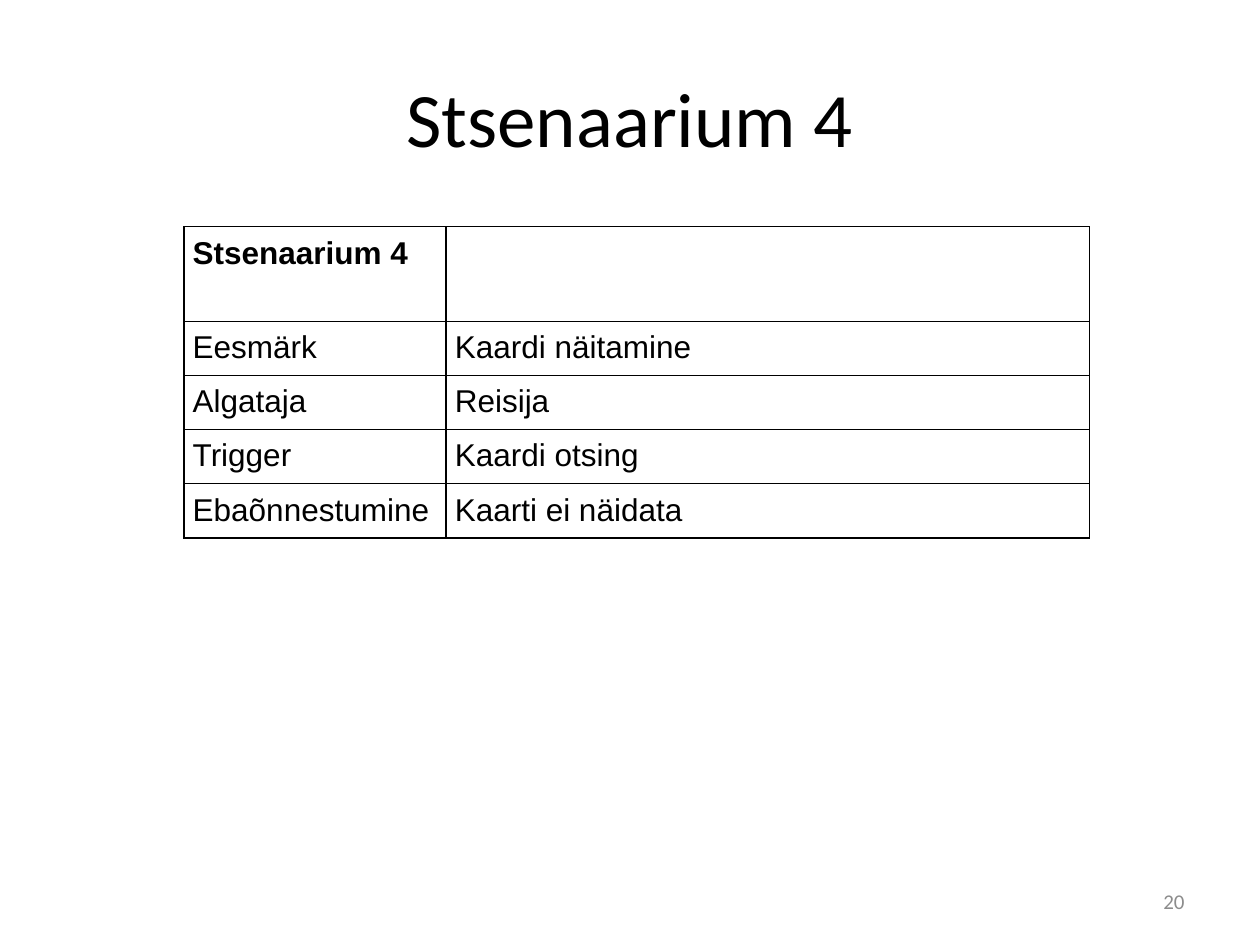
from lxml.etree import SubElement
from pptx import Presentation
from pptx.dml.color import RGBColor
from pptx.enum.text import MSO_ANCHOR, PP_ALIGN
from pptx.oxml.ns import qn
from pptx.util import Inches, Pt

COLORS = {"text": "000000", "border": "000000", "number": "8C8C8C"}
ROWS = [
    ("Stsenaarium 4", ""),
    ("Eesmärk", "Kaardi näitamine"),
    ("Algataja", "Reisija"),
    ("Trigger", "Kaardi otsing"),
    ("Ebaõnnestumine", "Kaarti ei näidata"),
]
COLUMN_WIDTHS = [2.08, 5.11]
ROW_HEIGHTS = [0.75] + [0.43] * 4


def style_paragraph(para, font_name, size, color, align=PP_ALIGN.LEFT):
    para.alignment = align
    para.font.name = font_name
    para.font.size = Pt(size)
    para.font.color.rgb = RGBColor.from_string(COLORS[color])


def add_borders(cell):
    """Draw a thin line on all four sides of a table cell."""
    properties = cell._tc.get_or_add_tcPr()
    for position, side in enumerate(("a:lnL", "a:lnR", "a:lnT", "a:lnB")):
        line = SubElement(properties, qn(side), w=str(Pt(0.75)))
        fill = SubElement(line, qn("a:solidFill"))
        SubElement(fill, qn("a:srgbClr"), val=COLORS["border"])
        properties.insert(position, line)


deck = Presentation()
deck.slide_width = Inches(10)
deck.slide_height = Inches(7.5)
slide = deck.slides.add_slide(deck.slide_layouts[5])

# Title
title = slide.shapes.title
title.left, title.top = Inches(0.5), Inches(0.3)
title.width, title.height = Inches(9), Inches(1.25)
title.text_frame.text = "Stsenaarium 4"
title.text_frame.vertical_anchor = MSO_ANCHOR.MIDDLE
style_paragraph(title.text_frame.paragraphs[0], "Calibri", 44, "text", PP_ALIGN.CENTER)

# Scenario table
table = slide.shapes.add_table(
    len(ROWS), len(COLUMN_WIDTHS), Inches(1.46), Inches(1.8),
    Inches(sum(COLUMN_WIDTHS)), Inches(sum(ROW_HEIGHTS)),
).table
table.first_row = False
table.horz_banding = False
for column, width in zip(table.columns, COLUMN_WIDTHS):
    column.width = Inches(width)
for row_index, (row, height, texts) in enumerate(zip(table.rows, ROW_HEIGHTS, ROWS)):
    row.height = Inches(height)
    for cell, text in zip(row.cells, texts):
        cell.text = text
        cell.margin_left = cell.margin_right = Inches(0.07)
        cell.margin_top = cell.margin_bottom = Inches(0.07)
        cell.fill.background()
        add_borders(cell)
        para = cell.text_frame.paragraphs[0]
        style_paragraph(para, "Arial", 18, "text")
        para.font.bold = row_index == 0

# Slide number
number_box = slide.shapes.add_textbox(Inches(7.17), Inches(6.95), Inches(2.33), Inches(0.4))
number_box.text_frame.word_wrap = True
number_box.text_frame.vertical_anchor = MSO_ANCHOR.MIDDLE
number_box.text_frame.text = "20"
style_paragraph(number_box.text_frame.paragraphs[0], "Calibri", 12, "number", PP_ALIGN.RIGHT)

deck.save("out.pptx")
